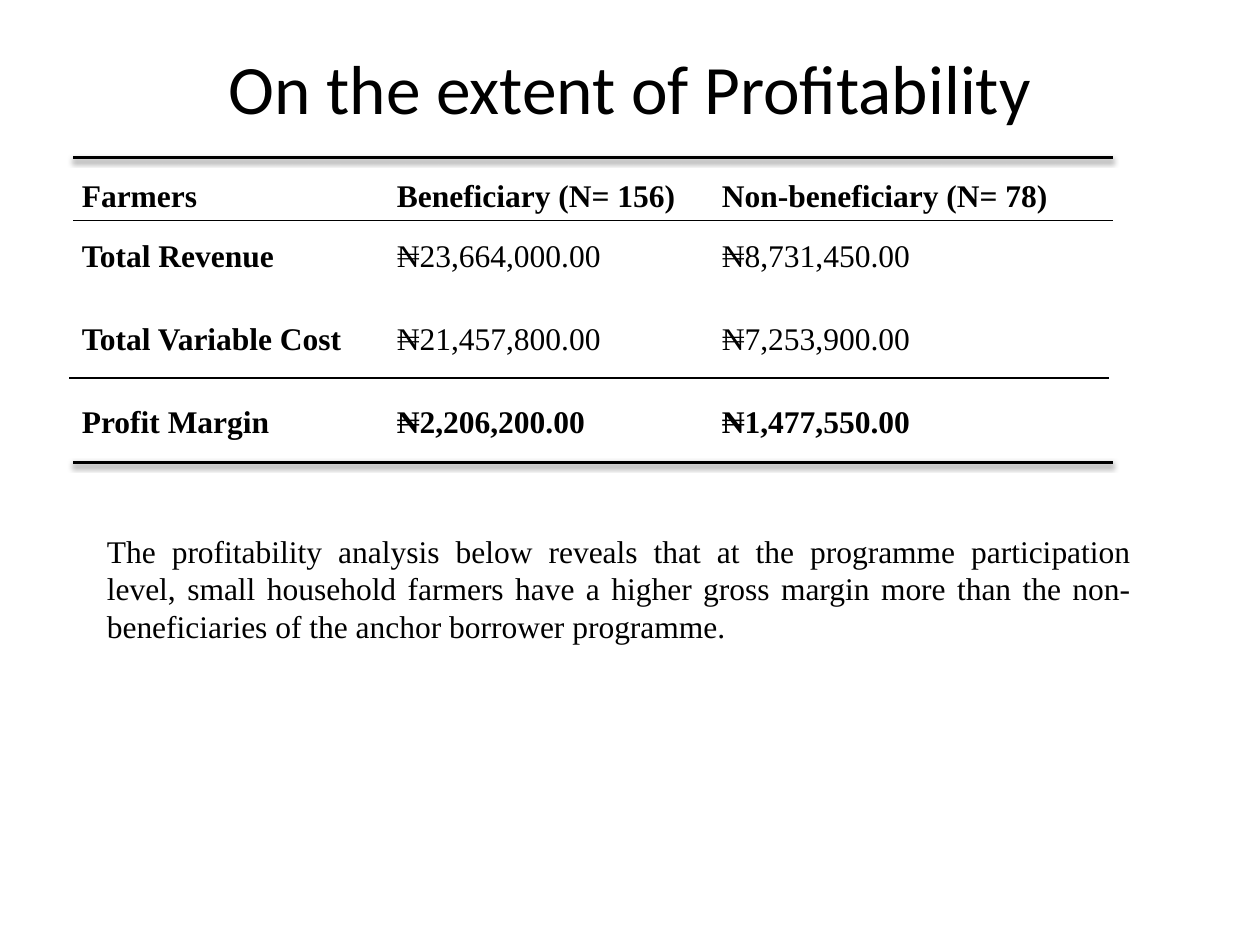
"""Build the slide comparing farmers' profitability."""
from dataclasses import dataclass

from lxml.etree import SubElement
from pptx import Presentation
from pptx.dml.color import RGBColor
from pptx.enum.shapes import MSO_CONNECTOR
from pptx.enum.text import MSO_ANCHOR, MSO_AUTO_SIZE, PP_ALIGN
from pptx.oxml.ns import qn
from pptx.slide import Slide
from pptx.text.text import TextFrame
from pptx.util import Inches, Pt

BLACK = RGBColor(0, 0, 0)
BODY_FONT = "Times New Roman"
RULE_LENGTH = 8.25
COLUMN_WIDTHS = (2.5, 2.58, 3.17)
ROW_HEIGHTS = (0.44, 0.66, 0.66, 0.66)
SUMMARY = (
    "The profitability analysis below reveals that at the programme participation "
    "level, small household farmers have a higher gross margin more than the "
    "non-beneficiaries of the anchor borrower programme."
)


@dataclass(frozen=True)
class TableRow:
    label: str
    beneficiary: str
    non_beneficiary: str
    bold_values: bool = False
    line_spacing: float = 1.15


@dataclass(frozen=True)
class Rule:
    left: float
    top: float
    weight: float = 0.75
    shadow: bool = False


TABLE_ROWS = (
    TableRow("Farmers", "Beneficiary (N= 156)", "Non-beneficiary (N= 78)", True, 1.0),
    TableRow("Total Revenue", "₦23,664,000.00", "₦8,731,450.00"),
    TableRow("Total Variable Cost", "₦21,457,800.00", "₦7,253,900.00"),
    TableRow("Profit Margin", "₦2,206,200.00", "₦1,477,550.00", True),
)
RULES = (
    Rule(0.58, 1.75),
    Rule(0.58, 1.25, 2, True),
    Rule(0.55, 3),
    Rule(0.58, 3.67, 2, True),
)


def write_text(
    text_frame: TextFrame,
    text: str,
    *,
    font: str = BODY_FONT,
    size: float = 18,
    bold: bool = False,
    alignment: PP_ALIGN = PP_ALIGN.JUSTIFY,
    line_spacing: float = 1.0,
) -> None:
    paragraph = text_frame.paragraphs[0]
    paragraph.alignment = alignment
    paragraph.line_spacing = line_spacing
    run = paragraph.add_run()
    run.text = text
    run.font.name = font
    run.font.size = Pt(size)
    run.font.bold = bold
    run.font.color.rgb = BLACK


def add_title(slide: Slide) -> None:
    title = slide.shapes.title
    title.left, title.top = Inches(0.5), Inches(0.3)
    title.width, title.height = Inches(9), Inches(0.78)
    title.text_frame.auto_size = MSO_AUTO_SIZE.NONE
    title.text_frame.vertical_anchor = MSO_ANCHOR.MIDDLE
    write_text(
        title.text_frame,
        "On the extent of Profitability",
        font="Calibri",
        size=39.6,
        alignment=PP_ALIGN.CENTER,
    )


def add_profit_table(slide: Slide) -> None:
    table = slide.shapes.add_table(
        len(TABLE_ROWS),
        len(COLUMN_WIDTHS),
        Inches(0.58),
        Inches(1.42),
        Inches(sum(COLUMN_WIDTHS)),
        Inches(sum(ROW_HEIGHTS)),
    ).table
    table.first_row = table.horz_banding = False
    for column, width in zip(table.columns, COLUMN_WIDTHS):
        column.width = Inches(width)
    for row, height, content in zip(table.rows, ROW_HEIGHTS, TABLE_ROWS):
        row.height = Inches(height)
        values = (content.label, content.beneficiary, content.non_beneficiary)
        for index, (cell, value) in enumerate(zip(row.cells, values)):
            cell.fill.background()
            cell.margin_left = cell.margin_right = Inches(0.07)
            cell.margin_top = cell.margin_bottom = 0
            write_text(
                cell.text_frame,
                value,
                bold=index == 0 or content.bold_values,
                line_spacing=content.line_spacing,
            )


def add_rule(slide: Slide, rule: Rule) -> None:
    connector = slide.shapes.add_connector(
        MSO_CONNECTOR.STRAIGHT,
        Inches(rule.left),
        Inches(rule.top),
        Inches(rule.left + RULE_LENGTH),
        Inches(rule.top),
    )
    connector.line.color.rgb = BLACK
    connector.line.width = Pt(rule.weight)
    effects = SubElement(connector.element.spPr, qn("a:effectLst"))
    if rule.shadow:
        shadow = SubElement(
            effects,
            qn("a:outerShdw"),
            blurRad=str(Pt(3.1)),
            dist=str(Pt(1.6)),
            dir="5400000",
            rotWithShape="0",
        )
        color = SubElement(shadow, qn("a:srgbClr"), val=str(BLACK))
        SubElement(color, qn("a:alpha"), val="38000")


def add_summary(slide: Slide) -> None:
    text_box = slide.shapes.add_textbox(
        Inches(0.75), Inches(4.17), Inches(8.33), Inches(1.01)
    )
    text_box.text_frame.word_wrap = True
    text_box.text_frame.auto_size = MSO_AUTO_SIZE.SHAPE_TO_FIT_TEXT
    write_text(text_box.text_frame, SUMMARY)


def main() -> None:
    presentation = Presentation()
    presentation.slide_width = Inches(10)
    presentation.slide_height = Inches(7.5)
    slide = presentation.slides.add_slide(presentation.slide_layouts[5])
    add_title(slide)
    add_profit_table(slide)
    for rule in RULES:
        add_rule(slide, rule)
    add_summary(slide)
    presentation.save("out.pptx")


if __name__ == "__main__":
    main()
